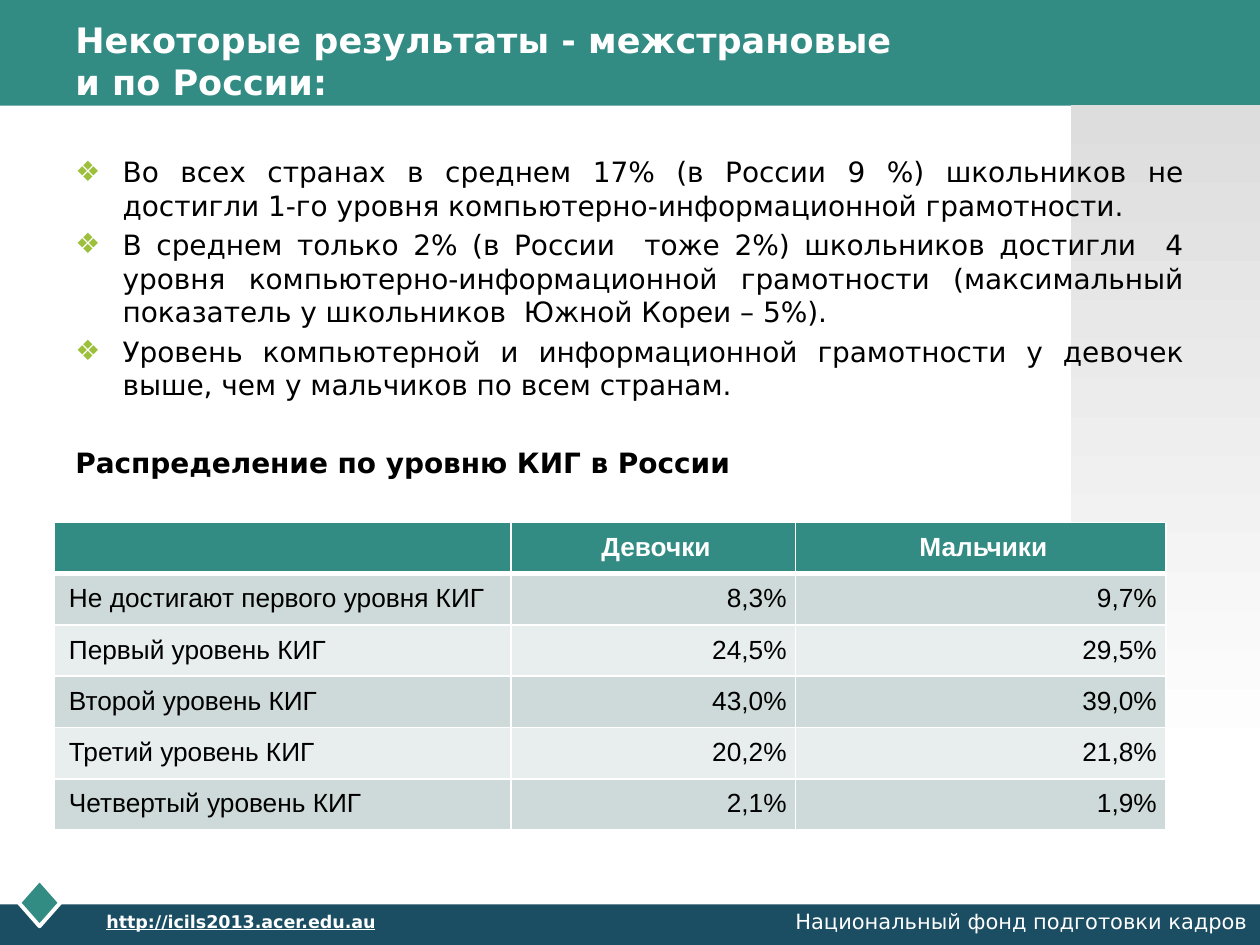
from dataclasses import dataclass
from typing import Optional

from lxml.etree import SubElement
from pptx import Presentation
from pptx.dml.color import RGBColor
from pptx.enum.shapes import MSO_SHAPE as Preset
from pptx.enum.text import MSO_ANCHOR as Anchor, PP_ALIGN as Align
from pptx.oxml.ns import qn
from pptx.util import Pt

TEAL = RGBColor(0x32, 0x8C, 0x83)
NAVY = RGBColor(0x1B, 0x4E, 0x63)
LIME = RGBColor(0x9D, 0xC0, 0x3C)
GREY = RGBColor(0xDD, 0xDD, 0xDD)
WHITE = RGBColor(0xFF, 0xFF, 0xFF)
BLACK = RGBColor(0, 0, 0)
BAND_DARK = RGBColor(0xCE, 0xDA, 0xD9)
BAND_LIGHT = RGBColor(0xE8, 0xEE, 0xED)
SANS, ARIAL = "DejaVu Sans", "Arial"


@dataclass
class Frame:
    left: float
    top: float
    width: float
    height: float

    def lengths(self) -> list:
        return [Pt(v) for v in (self.left, self.top, self.width, self.height)]


@dataclass
class Style:
    size: float
    color: RGBColor
    face: str = SANS
    bold: bool = False
    underline: bool = False


@dataclass
class Label:
    frame: Frame
    lines: list[str]
    style: Style
    align: Align = Align.LEFT
    anchor: Anchor = Anchor.TOP


def add_run(paragraph, text: str, style: Style) -> None:
    run = paragraph.add_run()
    run.text = text
    font = run.font
    font.size, font.name = Pt(style.size), style.face
    font.bold, font.underline = style.bold, style.underline
    font.color.rgb = style.color


def add_panel(slide, preset, frame: Frame, fill: Optional[RGBColor],
              outline: Optional[RGBColor] = None):
    panel = slide.shapes.add_shape(preset, *frame.lengths())
    panel.shadow.inherit = False
    if fill is not None:
        panel.fill.solid()
        panel.fill.fore_color.rgb = fill
    if outline is None:
        panel.line.fill.background()
    else:
        panel.line.color.rgb = outline
        panel.line.width = Pt(2.25)
    return panel


def add_frame(slide, frame: Frame):
    text_frame = slide.shapes.add_textbox(*frame.lengths()).text_frame
    text_frame.word_wrap = True
    return text_frame


def add_label(slide, label: Label) -> None:
    text_frame = add_frame(slide, label.frame)
    text_frame.vertical_anchor = label.anchor
    paragraph = text_frame.paragraphs[0]
    paragraph.alignment = label.align
    for index, line in enumerate(label.lines):
        if index:
            paragraph.add_line_break()
        add_run(paragraph, line, label.style)


def add_bullet(paragraph) -> None:
    props = paragraph._p.get_or_add_pPr()
    props.set("marL", str(Pt(27)))
    props.set("indent", str(-Pt(27)))
    color = SubElement(props, qn("a:buClr"))
    SubElement(color, qn("a:srgbClr"), val=str(LIME))
    SubElement(props, qn("a:buFont"), typeface=SANS)
    SubElement(props, qn("a:buChar"), char="❖")


def add_findings(slide, frame: Frame, findings: list[str], heading: str) -> None:
    text_frame = add_frame(slide, frame)
    for index, finding in enumerate(findings):
        paragraph = text_frame.add_paragraph() if index else text_frame.paragraphs[0]
        add_bullet(paragraph)
        paragraph.alignment = Align.JUSTIFY
        if index:
            paragraph.space_before = Pt(3.2)
        add_run(paragraph, finding, Style(16, BLACK))
    paragraph = text_frame.add_paragraph()
    paragraph.space_before = Pt(25.2)
    add_run(paragraph, heading, Style(16, BLACK, bold=True))


def add_borders(cell, bottom: float) -> None:
    props = cell._tc.get_or_add_tcPr()
    for side, width in (("L", 1), ("R", 1), ("T", 1), ("B", bottom)):
        line = SubElement(props, qn(f"a:ln{side}"), w=str(Pt(width)))
        fill = SubElement(line, qn("a:solidFill"))
        SubElement(fill, qn("a:srgbClr"), val=str(WHITE))


def fill_cell(cell, text: str, style: Style, align: Align, fill: RGBColor,
              bottom: float) -> None:
    add_borders(cell, bottom)
    cell.fill.solid()
    cell.fill.fore_color.rgb = fill
    cell.vertical_anchor = Anchor.MIDDLE
    cell.margin_left = cell.margin_right = Pt(5.2)
    cell.margin_top = cell.margin_bottom = Pt(0)
    paragraph = cell.text_frame.paragraphs[0]
    paragraph._p.get_or_add_pPr().set("marL", str(Pt(3)))
    paragraph.alignment = align
    paragraph.line_spacing = Pt(16)
    if text:
        add_run(paragraph, text, style)


def add_levels(slide, frame: Frame, widths: list[float],
               rows: list[tuple[str, str, str]]) -> None:
    levels = slide.shapes.add_table(len(rows), len(widths), *frame.lengths()).table
    levels.horz_banding = False
    for column, width in zip(levels.columns, widths):
        column.width = Pt(width)
    for r, row in enumerate(rows):
        levels.rows[r].height = Pt(round(frame.height / len(rows), 2))
        for c, text in enumerate(row):
            cell = levels.cell(r, c)
            if r == 0:
                head = Style(15, WHITE, ARIAL, bold=True)
                fill_cell(cell, text, head, Align.CENTER, TEAL, 3)
            else:
                band = BAND_DARK if r % 2 else BAND_LIGHT
                align = Align.RIGHT if c else Align.LEFT
                fill_cell(cell, text, Style(15, BLACK, ARIAL), align, band, 1)


def main() -> None:
    deck = Presentation()
    deck.slide_width, deck.slide_height = Pt(720), Pt(540)
    slide = deck.slides.add_slide(deck.slide_layouts[6])

    add_panel(slide, Preset.RECTANGLE, Frame(0, 0, 720, 60.4), TEAL)
    add_panel(slide, Preset.RECTANGLE, Frame(0, 516.8, 720, 23.2), NAVY)
    add_panel(slide, Preset.DIAMOND, Frame(10.8, 502.5, 23.6, 26.8), TEAL, WHITE)
    fade = add_panel(slide, Preset.RECTANGLE, Frame(612, 60.2, 108, 378), None)
    fade.fill.gradient()
    fade.fill.gradient_angle = 270
    for stop, color, position in zip(fade.fill.gradient_stops, (GREY, WHITE), (0, 1)):
        stop.color.rgb = color
        stop.position = position

    add_label(slide, Label(Frame(36, 12, 648, 44.6),
                           ["Некоторые результаты - межстрановые", "и по России:"],
                           Style(20, WHITE, bold=True), anchor=Anchor.MIDDLE))
    add_findings(slide, Frame(36, 85, 648, 413), [
        "Во всех странах в среднем 17% (в России 9 %) школьников не достигли "
        "1-го уровня компьютерно-информационной грамотности.",
        "В среднем только 2% (в России  тоже 2%) школьников достигли  4 уровня "
        "компьютерно-информационной грамотности (максимальный показатель "
        "у школьников  Южной Кореи – 5%).",
        "Уровень компьютерной и информационной грамотности у девочек выше, "
        "чем у мальчиков по всем странам.",
    ], "Распределение по уровню КИГ в России")
    add_label(slide, Label(Frame(29.5, 517, 192.2, 16.6), ["http://icils2013.acer.edu.au"],
                           Style(10, WHITE, bold=True, underline=True), Align.RIGHT))
    add_label(slide, Label(Frame(435.6, 515.5, 284.4, 18.7),
                           ["Национальный фонд подготовки кадров"],
                           Style(12, WHITE), Align.RIGHT))
    add_levels(slide, Frame(31.2, 298.5, 635, 175.9), [260.8, 162.7, 211.5], [
        ("", "Девочки", "Мальчики"),
        ("Не достигают первого уровня КИГ", "8,3%", "9,7%"),
        ("Первый уровень КИГ", "24,5%", "29,5%"),
        ("Второй уровень КИГ", "43,0%", "39,0%"),
        ("Третий уровень КИГ", "20,2%", "21,8%"),
        ("Четвертый уровень КИГ", "2,1%", "1,9%"),
    ])
    deck.save("out.pptx")


if __name__ == "__main__":
    main()
